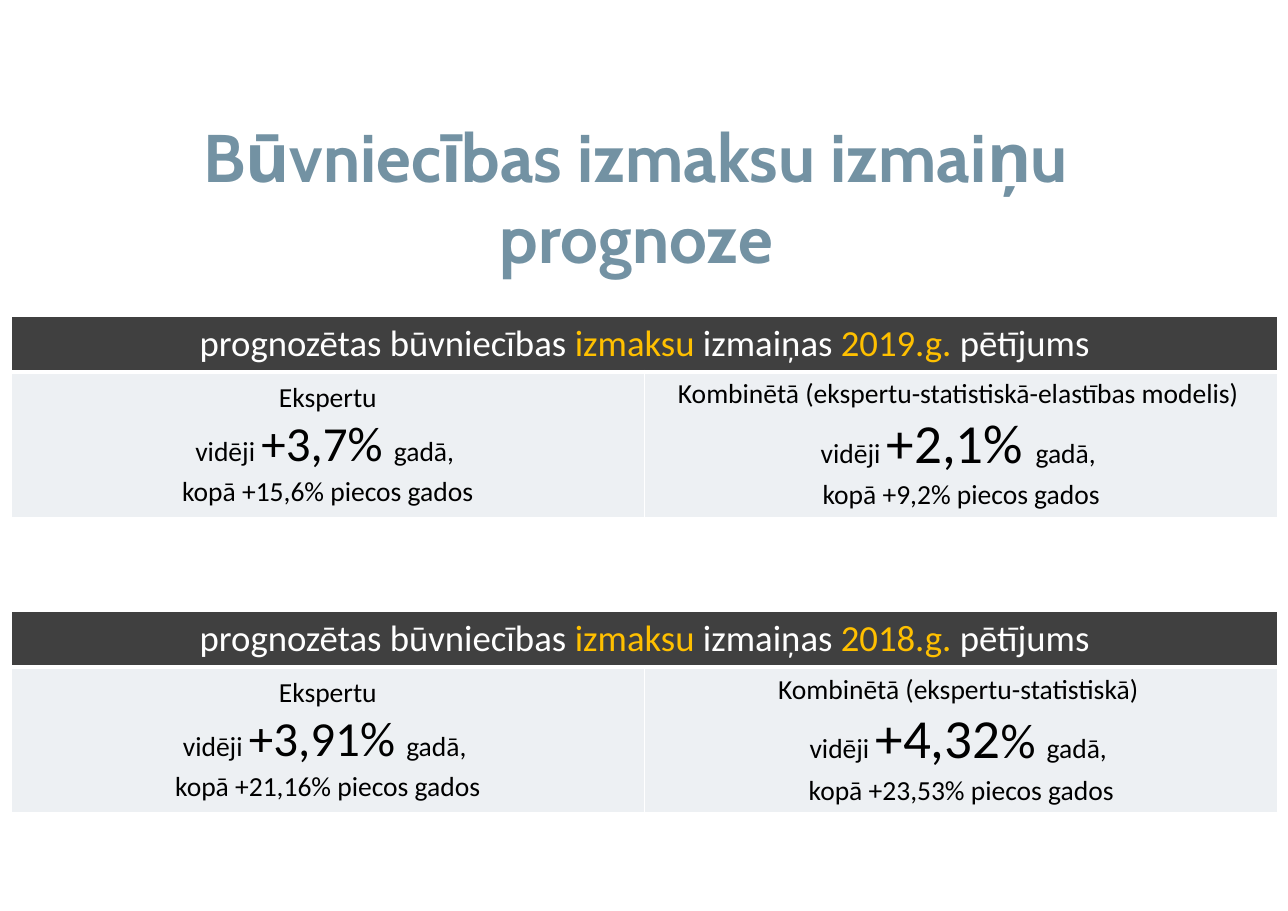
from dataclasses import dataclass
from lxml.etree import SubElement
from pptx import Presentation
from pptx.dml.color import RGBColor
from pptx.enum.text import MSO_ANCHOR, MSO_AUTO_SIZE, PP_ALIGN
from pptx.oxml.ns import qn
from pptx.util import Inches, Pt


@dataclass(frozen=True)
class Theme:
    title_font: str = "Cabin"
    body_font: str = "Calibri"
    title: str = "7392A3"
    header: str = "404040"
    body: str = "EDF0F3"
    text: str = "000000"
    white: str = "FFFFFF"
    accent: str = "FFC000"
    title_size: int = 44
    header_size: int = 24
    text_size: int = 18
    rate_size: int = 32
    big_size: int = 36


T = Theme()
TITLE = "Būvniecības izmaksu izmaiņu prognoze"
STUDIES = [
    {
        "year": "2019.g.",
        "top": 2.87,
        "forecasts": [
            ("Ekspertu", [("+3,7% ", T.rate_size)], "kopā +15,6% piecos gados"),
            ("Kombinētā (ekspertu-statistiskā-elastības modelis) ",
             [("+2,1% ", T.big_size)], "kopā +9,2% piecos gados"),
        ],
    },
    {
        "year": "2018.g.",
        "top": 5.55,
        "forecasts": [
            ("Ekspertu", [("+3,91% ", T.rate_size)], "kopā +21,16% piecos gados"),
            ("Kombinētā (ekspertu-statistiskā) ",
             [("+4,32", T.big_size), ("% ", T.rate_size)], "kopā +23,53% piecos gados"),
        ],
    },
]
LEFT, WIDTH = 0.1, 11.5
ROW_HEIGHTS = (0.5, 1.3)


def rgb(value):
    return RGBColor.from_string(value)


def style_cell(cell, fill, borders):
    tcPr = cell._tc.get_or_add_tcPr()
    for side, width in zip(("lnL", "lnR", "lnT", "lnB"), borders):
        line = SubElement(tcPr, qn(f"a:{side}"), w=str(Pt(width)))
        color = SubElement(SubElement(line, qn("a:solidFill")), qn("a:srgbClr"))
        color.set("val", T.white)
    cell.fill.solid()
    cell.fill.fore_color.rgb = rgb(fill)


def write_lines(cell, lines):
    tf = cell.text_frame
    for i, parts in enumerate(lines):
        p = tf.add_paragraph() if i else tf.paragraphs[0]
        p.alignment = PP_ALIGN.CENTER
        p.font.name = T.body_font
        for text, size, color in parts:
            r = p.add_run()
            r.text = text
            r.font.size = Pt(size)
            r.font.color.rgb = rgb(color)


def add_study(s, study):
    table = s.shapes.add_table(2, 2, Inches(LEFT), Inches(study["top"]),
                               Inches(WIDTH), Inches(sum(ROW_HEIGHTS))).table
    table.first_row = table.horz_banding = False
    for row, height in zip(table.rows, ROW_HEIGHTS):
        row.height = Inches(height)

    header = table.cell(0, 0)
    header.merge(table.cell(0, 1))
    for col in range(2):
        style_cell(table.cell(0, col), T.header, (1, 1, 1, 3))
    heading = [("prognozētas būvniecības ", T.white), ("izmaksu", T.accent),
               (" izmaiņas ", T.white), (study["year"], T.accent),
               (" pētījums", T.white)]
    write_lines(header, [[(text, T.header_size, color) for text, color in heading]])

    for col, (method, rate, total) in enumerate(study["forecasts"]):
        cell = table.cell(1, col)
        style_cell(cell, T.body, (1, 1, 3, 1))
        cell.vertical_anchor = MSO_ANCHOR.MIDDLE
        small = T.text_size
        lines = [[(method, small)],
                 [("vidēji ", small), *rate, ("gadā, ", small)],
                 [(total, small)]]
        write_lines(cell, [[(*part, T.text) for part in parts] for parts in lines])


def add_title(s):
    title = s.shapes.title
    title.left, title.top = Inches(0.73), Inches(0.98)
    title.width, title.height = Inches(10.09), Inches(1.6)
    tf = title.text_frame
    tf.text = TITLE
    tf.word_wrap = True
    tf.auto_size = MSO_AUTO_SIZE.NONE
    tf.vertical_anchor = MSO_ANCHOR.MIDDLE
    p = tf.paragraphs[0]
    p.alignment = PP_ALIGN.CENTER
    p.font.name = T.title_font
    p.font.size = Pt(T.title_size)
    p.font.bold = True
    p.font.color.rgb = rgb(T.title)


def main():
    prs = Presentation()
    prs.slide_width, prs.slide_height = Inches(11.69), Inches(8.27)
    s = prs.slides.add_slide(prs.slide_layouts[5])
    add_title(s)
    for study in STUDIES:
        add_study(s, study)
    prs.save("out.pptx")


if __name__ == "__main__":
    main()
